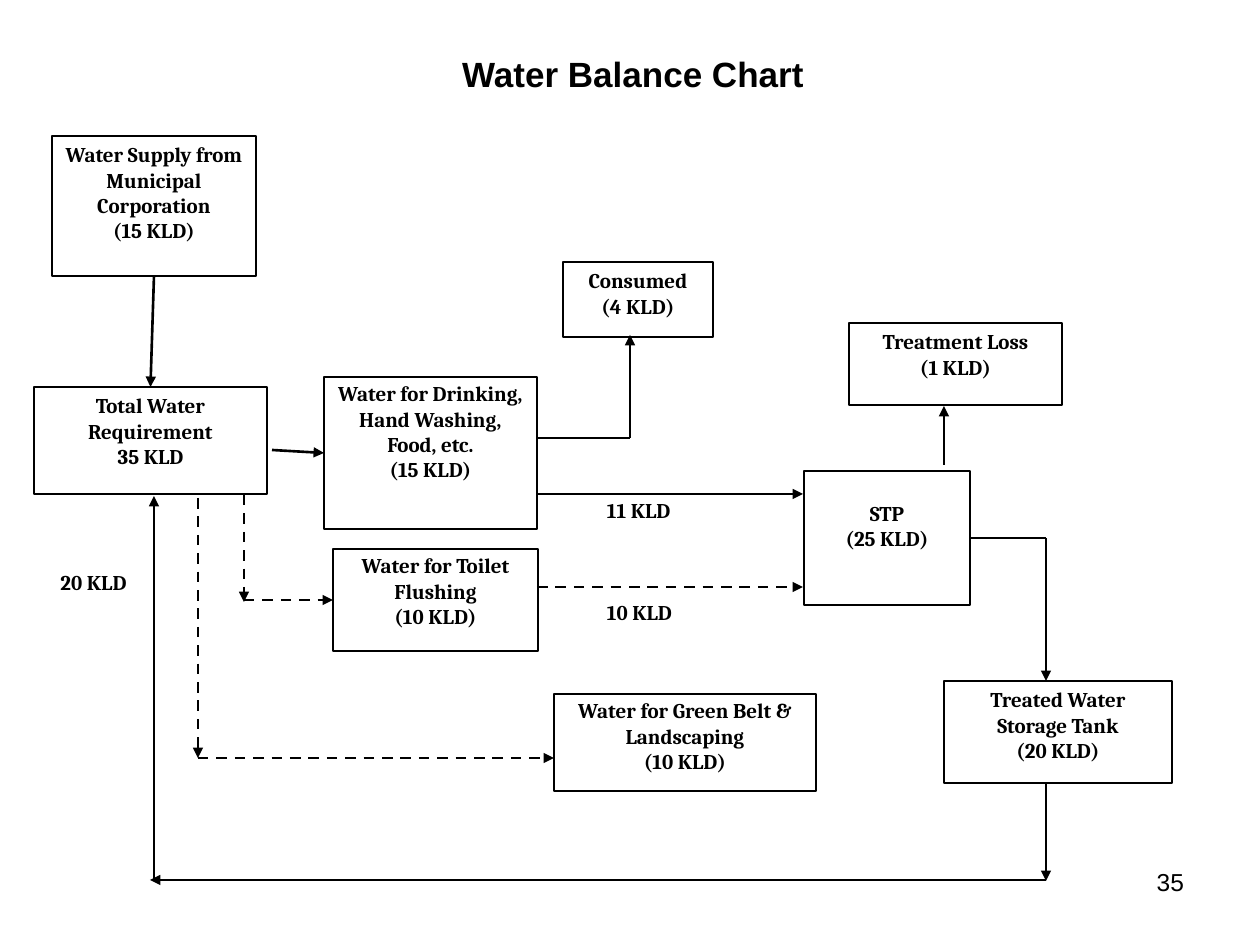
from lxml.etree import SubElement
from pptx import Presentation
from pptx.dml.color import RGBColor
from pptx.enum.dml import MSO_LINE
from pptx.enum.shapes import MSO_CONNECTOR, MSO_SHAPE
from pptx.enum.text import MSO_ANCHOR as ANCHOR, MSO_AUTO_SIZE, PP_ALIGN as ALIGN
from pptx.oxml.ns import qn
from pptx.util import Emu, Pt

PX_PER_INCH = 126
COLORS = {"ink": "000000", "paper": "FFFFFF"}
TOP, LEFT, BOTTOM, RIGHT = range(4)
WIDE, NARROW = (13, 6), (9, 4)


def px(length):
    """Turn whole pixels into EMU."""
    return Emu(round(length * 914400 / PX_PER_INCH))


def color(name):
    """Look up a colour by its role."""
    return RGBColor.from_string(COLORS[name])


def write(shape, text, font="Cambria", size=12, bold=True, align=ALIGN.CENTER,
          anchor=ANCHOR.TOP, inset=WIDE, drop=0):
    """Set the text of a shape, one paragraph a line, with its format."""
    frame = shape.text_frame
    frame.word_wrap = True
    frame.auto_size = MSO_AUTO_SIZE.NONE
    frame.vertical_anchor = anchor
    side, edge = inset
    frame.margin_left = frame.margin_right = px(side)
    frame.margin_top, frame.margin_bottom = px(edge + drop), px(edge)
    frame.text = text
    for paragraph in frame.paragraphs:
        paragraph.alignment = align
        for run in paragraph.runs:
            run.font.name, run.font.size, run.font.bold = font, Pt(size), bold
            run.font.color.rgb = color("ink")


def add_title(slide, text, bounds):
    """Place and fill the title placeholder."""
    title = slide.shapes.title
    title.left, title.top, title.width, title.height = map(px, bounds)
    write(title, text, font="Arial", size=20, anchor=ANCHOR.MIDDLE)


def add_label(slide, text, bounds, **text_format):
    """Add a free-standing text."""
    write(slide.shapes.add_textbox(*map(px, bounds)), text, **text_format)


def add_stage(slide, text, bounds, filled=True, **text_format):
    """Add an outlined box for one stage of the water cycle."""
    stage = slide.shapes.add_shape(MSO_SHAPE.RECTANGLE, *map(px, bounds))
    stage.shadow.inherit = False
    if filled:
        stage.fill.solid()
        stage.fill.fore_color.rgb = color("paper")
    else:
        stage.fill.background()
    stage.line.color.rgb = color("ink")
    stage.line.width = Pt(1.5)
    write(stage, text, **text_format)
    return stage


def add_flow(slide, start, end, arrow=True, dashed=False, width=1.5):
    """Draw a line between two ends, each a point or a (stage, side) pair."""
    ends = [(0, 0) if not isinstance(place[0], int) else place for place in (start, end)]
    flow = slide.shapes.add_connector(
        MSO_CONNECTOR.STRAIGHT, *(px(value) for point in ends for value in point))
    for place, join in ((start, flow.begin_connect), (end, flow.end_connect)):
        if not isinstance(place[0], int):
            join(*place)
    flow.line.color.rgb = color("ink")
    flow.line.width = Pt(width)
    if dashed:
        flow.line.dash_style = MSO_LINE.DASH
    properties = flow.line._get_or_add_ln()
    if arrow:
        SubElement(properties, qn("a:tailEnd"), type="triangle")
    SubElement(properties.getparent(), qn("a:effectLst"))


def add_stages(slide):
    """Add every stage and return those that flows are joined to."""
    supply = add_stage(slide, "Water Supply from Municipal Corporation\n(15 KLD)",
                       (52, 136, 204, 140), filled=False)
    total = add_stage(slide, "Total Water Requirement\n35 KLD",
                      (34, 387, 233, 107), filled=False)
    drinking = add_stage(slide, "Water for Drinking, Hand Washing, Food, etc.\n(15 KLD)",
                         (324, 377, 213, 152), inset=NARROW)
    flushing = add_stage(slide, "Water for Toilet Flushing\n(10 KLD)",
                         (333, 549, 205, 102), inset=NARROW)
    stp = add_stage(slide, "STP\n(25 KLD)", (804, 471, 166, 134), inset=NARROW, drop=25)
    add_stage(slide, "Water for Green Belt & Landscaping\n(10 KLD)",
              (554, 694, 262, 97), inset=NARROW)
    add_stage(slide, "Consumed\n(4 KLD)", (563, 262, 150, 75))
    add_stage(slide, "Treatment Loss\n(1 KLD)", (849, 323, 213, 82))
    add_stage(slide, "Treated Water Storage Tank\n(20 KLD)", (944, 681, 228, 102))
    return supply, total, drinking, flushing, stp


def add_flows(slide, supply, total, drinking, flushing, stp):
    """Draw every flow between the stages."""
    add_flow(slide, (supply, BOTTOM), (total, TOP))
    add_flow(slide, (272, 450), (drinking, LEFT))
    add_flow(slide, (537, 438), (630, 438), arrow=False)
    add_flow(slide, (630, 438), (630, 335))
    add_flow(slide, (537, 494), (803, 494))
    add_flow(slide, (537, 587), (803, 587), dashed=True)
    add_flow(slide, (244, 495), (244, 602), dashed=True)
    add_flow(slide, (244, 600), (flushing, LEFT), dashed=True)
    add_flow(slide, (198, 498), (198, 758), dashed=True)
    add_flow(slide, (198, 758), (554, 758), dashed=True)
    add_flow(slide, (944, 465), (944, 406), width=1)
    add_flow(slide, (stp, RIGHT), (1046, 538), arrow=False)
    add_flow(slide, (1046, 538), (1046, 681))
    add_flow(slide, (1046, 783), (1046, 881))
    add_flow(slide, (1046, 880), (150, 880))
    add_flow(slide, (154, 880), (154, 496))


def main():
    """Build the water balance slide."""
    deck = Presentation()
    deck.slide_width, deck.slide_height = px(1260), px(945)
    slide = deck.slides.add_slide(deck.slide_layouts[5])
    add_title(slide, "Water Balance Chart", (260, 45, 746, 56))
    add_flows(slide, *add_stages(slide))
    add_label(slide, "20 KLD", (40, 566, 107, 53), inset=NARROW)
    add_label(slide, "11 KLD", (598, 494, 118, 48), inset=NARROW, align=ALIGN.LEFT)
    add_label(slide, "10 KLD", (598, 596, 118, 48), inset=NARROW, align=ALIGN.LEFT)
    add_label(slide, "35", (903, 861, 294, 66), font="Arial", size=14, bold=False,
              align=ALIGN.RIGHT)
    deck.save("out.pptx")


if __name__ == "__main__":
    main()
